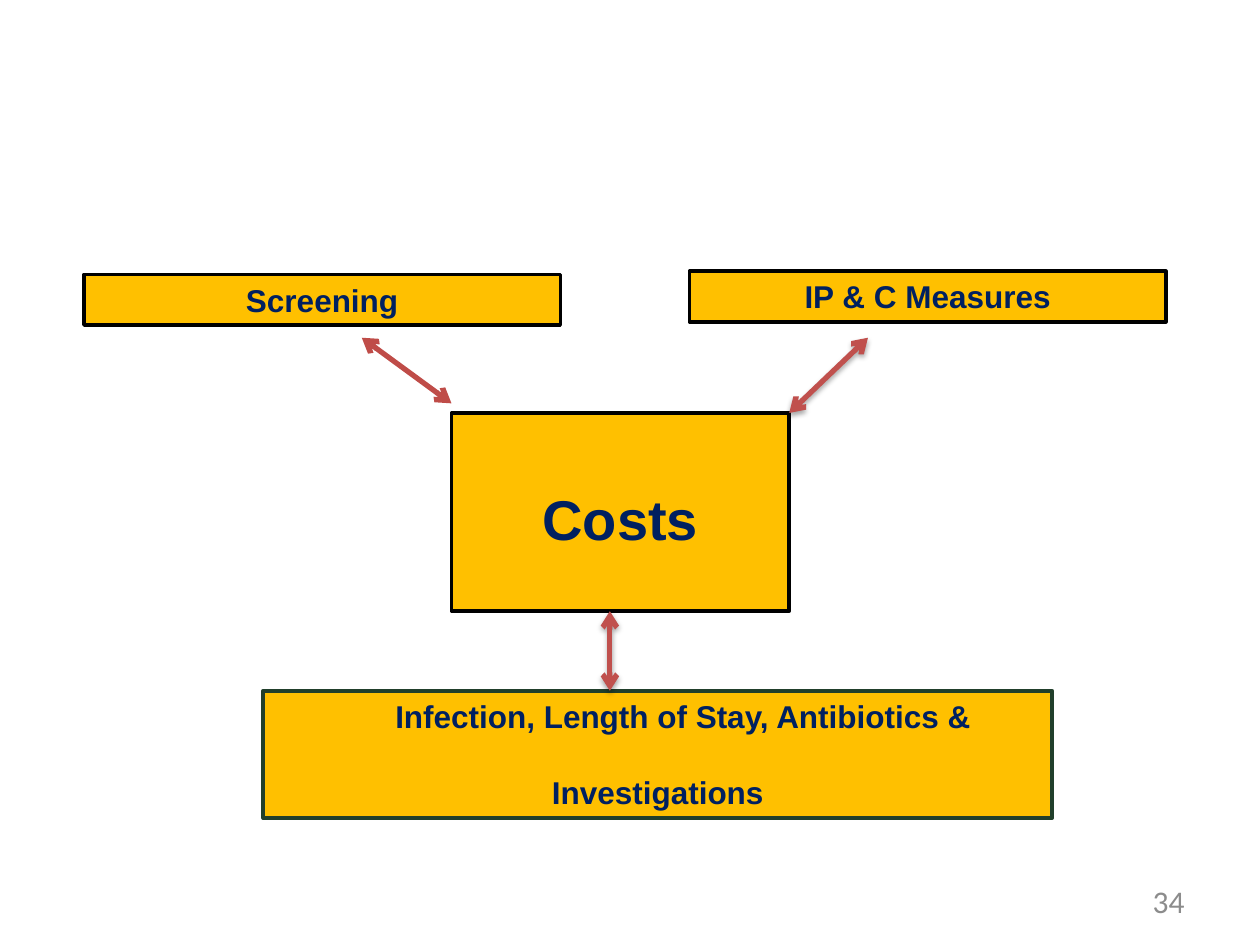
from dataclasses import dataclass

from lxml.etree import SubElement
from pptx import Presentation
from pptx.dml.color import RGBColor
from pptx.enum.shapes import MSO_CONNECTOR, MSO_SHAPE
from pptx.enum.text import MSO_ANCHOR, PP_ALIGN
from pptx.oxml.ns import qn
from pptx.util import Pt


@dataclass(frozen=True)
class Theme:
    box_fill: str = "FFC000"
    box_line: str = "000000"
    outcome_line: str = "213F2B"
    box_text: str = "002060"
    arrow: str = "C0504D"
    plain_arrow: str = "BF4C48"
    shadow: str = "000000"
    number: str = "8C8C8C"
    box_font: str = "Arial"
    number_font: str = "Calibri"
    body_size: int = 18
    hub_size: int = 32


THEME = Theme()


def add_span(para, text, size, color, font, bold=False):
    span = para.add_run()
    span.text = text
    span.font.size = Pt(size)
    span.font.name = font
    span.font.bold = bold
    span.font.color.rgb = RGBColor.from_string(color)


def add_box(page, area, lines, size=THEME.body_size, line=THEME.box_line,
            line_width=2, top_inset=3.6, line_gap=0):
    """Add a filled box with centred bold lines and return its paragraphs."""
    box = page.shapes.add_shape(MSO_SHAPE.RECTANGLE, *map(Pt, area))
    box.shadow.inherit = False
    box.fill.solid()
    box.fill.fore_color.rgb = RGBColor.from_string(THEME.box_fill)
    box.line.color.rgb = RGBColor.from_string(line)
    box.line.width = Pt(line_width)
    frame = box.text_frame
    frame.word_wrap = True
    frame.vertical_anchor = MSO_ANCHOR.TOP
    frame.margin_top = Pt(top_inset)
    for index, text in enumerate(lines):
        para = frame.add_paragraph() if index else frame.paragraphs[0]
        para.alignment = PP_ALIGN.CENTER
        if index:
            para.space_before = Pt(line_gap)
        add_span(para, text, size, THEME.box_text, THEME.box_font, bold=True)
    return frame.paragraphs


def add_arrow(page, start, end, color=THEME.arrow, shadow=True):
    """Add a double-headed arrow, with a soft shadow below it if wanted."""
    arrow = page.shapes.add_connector(
        MSO_CONNECTOR.STRAIGHT, *map(Pt, (*start, *end)))
    arrow.line.color.rgb = RGBColor.from_string(color)
    arrow.line.width = Pt(3)
    outline = arrow.line._get_or_add_ln()
    for tag in ("a:headEnd", "a:tailEnd"):
        SubElement(outline, qn(tag), type="arrow")
    effects = SubElement(arrow._element.spPr, qn("a:effectLst"))
    if shadow:
        outer = SubElement(effects, qn("a:outerShdw"), blurRad=str(Pt(3.1)),
                           dist=str(Pt(1.8)), dir="5400000", rotWithShape="0")
        tint = SubElement(outer, qn("a:srgbClr"), val=THEME.shadow)
        SubElement(tint, qn("a:alpha"), val="35000")


def add_page_number(page, text):
    box = page.shapes.add_textbox(Pt(516), Pt(500.5), Pt(168), Pt(28.75))
    frame = box.text_frame
    frame.word_wrap = True
    frame.vertical_anchor = MSO_ANCHOR.MIDDLE
    para = frame.paragraphs[0]
    para.alignment = PP_ALIGN.RIGHT
    add_span(para, text, THEME.body_size, THEME.number, THEME.number_font)


def main():
    deck = Presentation()
    deck.slide_width, deck.slide_height = Pt(720), Pt(540)
    page = deck.slides.add_slide(deck.slide_layouts[6])

    # Cost drivers
    add_box(page, (48, 156.75, 272.25, 29), ["Screening"])
    add_box(page, (394, 155, 272.25, 29), ["IP & C Measures"])

    # Hub
    add_box(page, (258, 236, 193, 113.25), ["Costs"],
            size=THEME.hub_size, top_inset=41)

    # Outcomes, with the first line set in from the left
    outcome = add_box(
        page, (150.5, 394.75, 450.75, 72.75),
        ["Infection, Length of Stay, Antibiotics &", "Investigations"],
        line=THEME.outcome_line, line_width=2.25, line_gap=22)
    outcome[0]._p.get_or_add_pPr().set("marL", str(Pt(29)))

    # Arrows between the hub and the other boxes
    add_arrow(page, (206.75, 193), (258, 230.5), THEME.plain_arrow, shadow=False)
    add_arrow(page, (496, 193), (451, 236))
    add_arrow(page, (348.5, 349.25), (348.5, 394.75))

    add_page_number(page, "34")
    deck.save("out.pptx")


if __name__ == "__main__":
    main()
